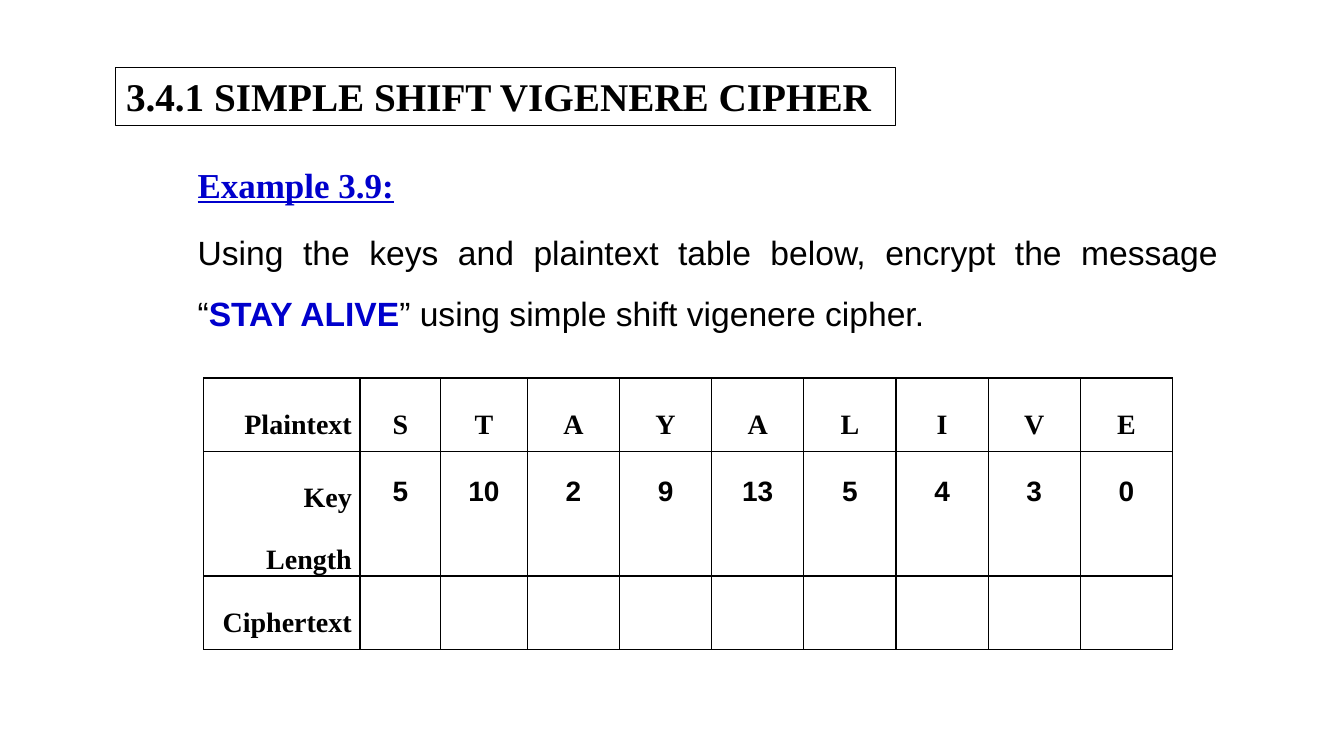
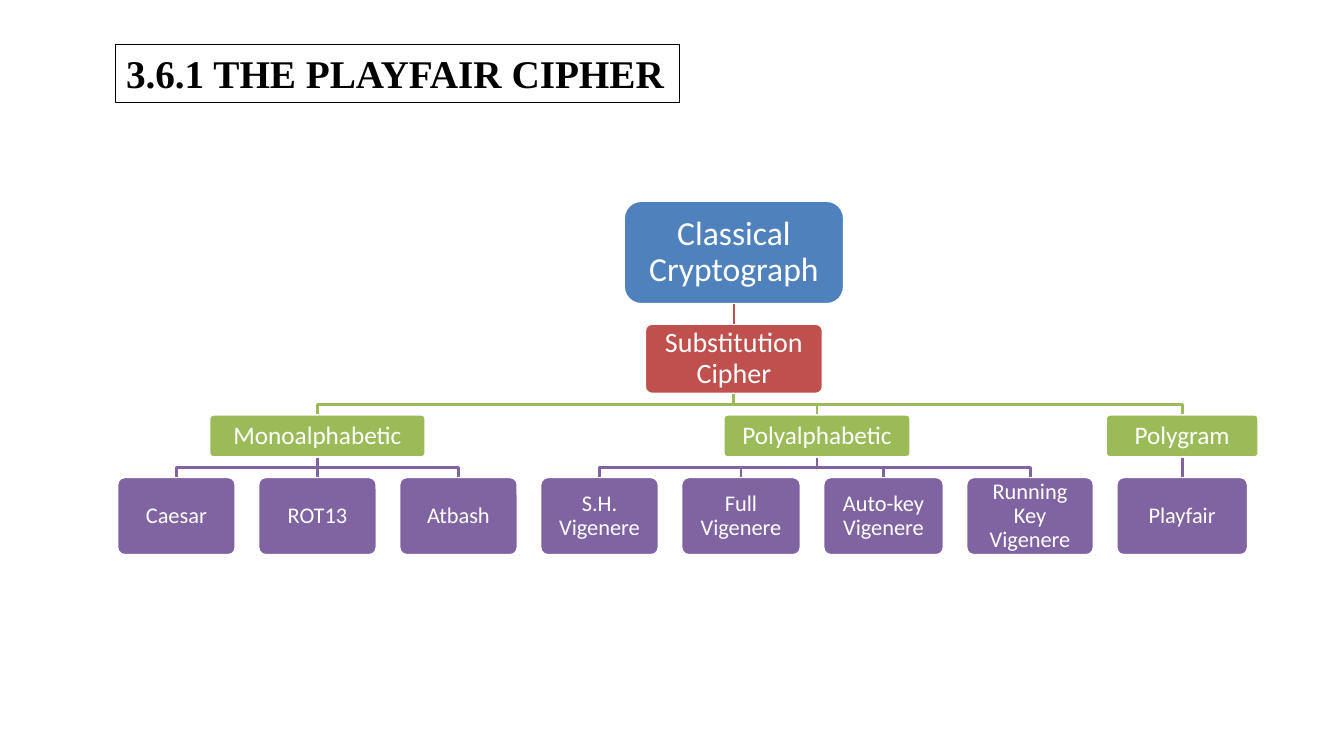
"""Build two cipher slides: a worked Vigenere example and a tree of classical ciphers."""
from lxml.etree import SubElement
from pptx import Presentation
from pptx.dml.color import RGBColor
from pptx.enum.shapes import MSO_CONNECTOR as Connector, MSO_SHAPE as Shape
from pptx.enum.text import MSO_ANCHOR as Anchor, MSO_AUTO_SIZE as AutoSize, PP_ALIGN as Align
from pptx.oxml.ns import qn
from pptx.util import Inches, Pt

BLACK, WHITE, BLUE = "000000", "FFFFFF", "0000CC"
SERIF, SANS, TREE_FONT = "Times New Roman", "Arial", "Calibri"

EXAMPLE = {
    "title": ("3.4.1 SIMPLE SHIFT VIGENERE CIPHER", 1.15, 0.67, 7.73, 0.58),
    "heading": "Example 3.9:",
    "task": [
        ("Using the keys and plaintext table below, encrypt the message “", BLACK, False),
        ("STAY ALIVE", BLUE, True),
        ("” using simple shift vigenere cipher.", BLACK, False),
    ],
    "rows": [
        ("Plaintext", SERIF, 2.0, list("STAYALIVE")),
        ("Key Length", SANS, 1.8, ["5", "10", "2", "9", "13", "5", "4", "3", "0"]),
        ("Ciphertext", SERIF, 2.0, [""] * 9),
    ],
}
TABLE_WIDTH, ROW_HEIGHT = 9.61, 0.73
FIRST_COLUMNS = [1.55, 0.8, 0.86]
COLUMN_WIDTHS = FIRST_COLUMNS + [(TABLE_WIDTH - sum(FIRST_COLUMNS)) / 7] * 7

TREE_TITLE = ("3.6.1 THE PLAYFAIR CIPHER", 1.15, 0.44, 5.59, 0.58)
TREE = ("Classical Cryptograph", 2.19, [
    ("Substitution Cipher", 1.77, [
        ("Monoalphabetic", 2.15, [
            ("Caesar", 1.18, []),
            ("ROT13", 1.18, []),
            ("Atbash", 1.18, []),
        ]),
        ("Polyalphabetic", 1.86, [
            ("S.H. Vigenere", 1.18, []),
            ("Full Vigenere", 1.19, []),
            ("Auto-key Vigenere", 1.2, []),
            ("Running Key Vigenere", 1.27, []),
        ]),
        ("Polygram", 1.52, [
            ("Playfair", 1.31, []),
        ]),
    ]),
])
LEVELS = [
    {"top": 1.99, "height": 1.03, "fill": "4F81BD", "size": 24, "corner": 0.17, "inset": 0.16},
    {"top": 3.21, "height": 0.7, "fill": "C0504D", "size": 20, "corner": 0.1, "inset": 0.1},
    {"top": 4.11, "height": 0.43, "fill": "9BBB59", "size": 18, "corner": 0.1, "inset": 0.09},
    {"top": 4.73, "height": 0.78, "fill": "8064A2", "size": 16, "corner": 0.1, "inset": 0.09},
]
TREE_LEFT, LEAF_GAP = 1.16, 1.53 / 7


def color(value):
    return RGBColor.from_string(value)


def add_run(paragraph, text, size, font, fill, bold=False, underline=False):
    run = paragraph.add_run()
    run.text = text
    run.font.size, run.font.name = Pt(size), font
    run.font.bold, run.font.underline = bold, underline
    run.font.color.rgb = color(fill)


def place(shape, *box):
    shape.left, shape.top, shape.width, shape.height = map(Inches, box)


def add_titled_slide(presentation, layout, title):
    slide = presentation.slides.add_slide(presentation.slide_layouts[layout])
    text, *box = title
    shape = slide.shapes.title
    place(shape, *box)
    shape.line.color.rgb, shape.line.width = color(BLACK), Pt(0.75)
    frame = shape.text_frame
    frame.auto_size, frame.vertical_anchor = AutoSize.NONE, Anchor.TOP
    paragraph = frame.paragraphs[0]
    paragraph.alignment = Align.LEFT
    add_run(paragraph, text, 28, SERIF, BLACK, bold=True)
    return slide


def plain_paragraph(paragraph, alignment):
    paragraph.alignment, paragraph.line_spacing = alignment, 1.5
    properties = paragraph._p.get_or_add_pPr()
    properties.set("marL", "0")
    properties.set("indent", "0")
    SubElement(properties, qn("a:buNone"))


def border_cell(cell):
    properties = cell._tc.get_or_add_tcPr()
    for side in ("a:lnL", "a:lnR", "a:lnT", "a:lnB"):
        line = SubElement(properties, qn(side), w=str(Pt(1)))
        SubElement(SubElement(line, qn("a:solidFill")), qn("a:srgbClr"), val=BLACK)


def fill_cell(cell, text, font, alignment, spacing=2.0):
    border_cell(cell)
    cell.fill.background()
    cell.margin_left = cell.margin_right = Inches(0.08)
    cell.margin_top = cell.margin_bottom = 0
    if text:
        paragraph = cell.text_frame.paragraphs[0]
        paragraph.alignment, paragraph.line_spacing = alignment, spacing
        add_run(paragraph, text, 20, font, BLACK, bold=True)


def build_example(presentation):
    slide = add_titled_slide(presentation, 1, EXAMPLE["title"])
    body = slide.placeholders[1]
    place(body, 1.86, 1.36, 10.32, 2.15)
    frame = body.text_frame
    frame.auto_size = AutoSize.NONE
    heading, task = frame.paragraphs[0], frame.add_paragraph()
    plain_paragraph(heading, Align.LEFT)
    add_run(heading, EXAMPLE["heading"], 25, SERIF, BLUE, bold=True, underline=True)
    plain_paragraph(task, Align.JUSTIFY)
    for text, fill, bold in EXAMPLE["task"]:
        add_run(task, text, 24, SANS, fill, bold)

    rows = EXAMPLE["rows"]
    table = slide.shapes.add_table(
        len(rows), len(COLUMN_WIDTHS), Inches(2.02), Inches(3.75),
        Inches(TABLE_WIDTH), Inches(ROW_HEIGHT * len(rows))).table
    table.first_row = table.horz_banding = False
    for column, width in zip(table.columns, COLUMN_WIDTHS):
        column.width = Inches(width)
    for row_index, (label, font, spacing, values) in enumerate(rows):
        fill_cell(table.cell(row_index, 0), label, SERIF, Align.RIGHT)
        for column_index, value in enumerate(values, 1):
            fill_cell(table.cell(row_index, column_index), value, font, Align.CENTER, spacing)


def add_node(slide, text, left, width, level):
    shape = slide.shapes.add_shape(
        Shape.ROUNDED_RECTANGLE, Inches(left), Inches(level["top"]),
        Inches(width), Inches(level["height"]))
    shape.adjustments[0] = level["corner"]
    shape.shadow.inherit = False
    shape.fill.solid()
    shape.fill.fore_color.rgb = color(level["fill"])
    shape.line.color.rgb, shape.line.width = color(WHITE), Pt(2)
    frame = shape.text_frame
    frame.word_wrap, frame.vertical_anchor = True, Anchor.MIDDLE
    frame.margin_left = frame.margin_right = Inches(level["inset"])
    frame.margin_top = frame.margin_bottom = Inches(level["inset"])
    paragraph = frame.paragraphs[0]
    paragraph.alignment, paragraph.line_spacing = Align.CENTER, 0.9
    add_run(paragraph, text, level["size"], TREE_FONT, WHITE)
    return shape


def middle(shape):
    return shape.left + shape.width // 2


def add_straight_link(slide, parent, child):
    link = slide.shapes.add_connector(
        Connector.STRAIGHT, middle(parent), parent.top + parent.height, middle(child), child.top)
    link.begin_connect(parent, 2)
    link.end_connect(child, 0)
    return link


def add_bent_link(slide, parent, child):
    start, bottom = middle(parent), parent.top + parent.height
    end, bend = middle(child), (bottom + child.top) // 2
    builder = slide.shapes.build_freeform(start, bottom)
    builder.add_line_segments([(start, bend), (end, bend), (end, child.top)], close=False)
    link = builder.convert_to_shape()
    link.fill.background()
    return link


def join(slide, parent, child, fill):
    aligned = abs(middle(parent) - middle(child)) < Inches(0.01)
    link = (add_straight_link if aligned else add_bent_link)(slide, parent, child)
    link.line.color.rgb, link.line.width = color(fill), Pt(2)
    SubElement(link._element.spPr, qn("a:effectLst"))


def add_branch(slide, node, depth, cursor):
    text, width, branches = node
    children = []
    for branch in branches:
        child, cursor = add_branch(slide, branch, depth + 1, cursor)
        children.append(child)
    if not children:
        return add_node(slide, text, cursor, width, LEVELS[depth]), cursor + width + LEAF_GAP
    last = children[-1]
    center = (children[0].left + last.left + last.width) / 2 / Inches(1)
    shape = add_node(slide, text, center - width / 2, width, LEVELS[depth])
    for child in children:
        join(slide, shape, child, LEVELS[depth + 1]["fill"])
    return shape, cursor


def build_tree(presentation):
    slide = add_titled_slide(presentation, 5, TREE_TITLE)
    add_branch(slide, TREE, 0, TREE_LEFT)


def main():
    presentation = Presentation()
    presentation.slide_width, presentation.slide_height = Inches(13.33), Inches(7.5)
    build_example(presentation)
    build_tree(presentation)
    presentation.save("out.pptx")


if __name__ == "__main__":
    main()
